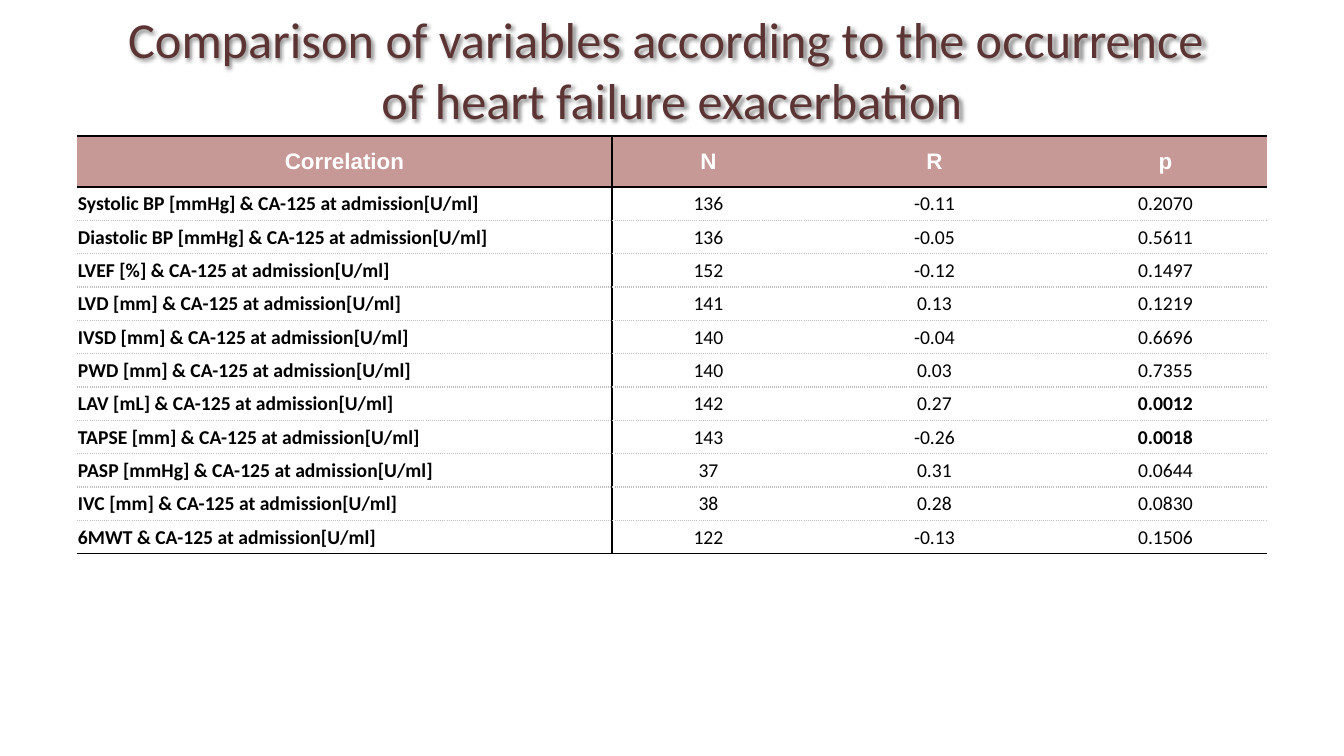
from lxml import etree
from pptx import Presentation
from pptx import util as u
from pptx.dml.color import RGBColor
from pptx.enum import text
from pptx.oxml import parse_xml
from pptx.oxml.ns import nsdecls, qn

SCALE = 914400 / 100.8
BLACK = RGBColor(0x00, 0x00, 0x00)
WHITE = RGBColor(0xFF, 0xFF, 0xFF)
GREY = RGBColor(0xBF, 0xBF, 0xBF)
OUTLINE = RGBColor(0x40, 0x40, 0x40)
ROSE = RGBColor(0xC6, 0x98, 0x96)
MAROON = RGBColor(0x5B, 0x34, 0x33)
NO_STYLE = "{2D5ABB26-0587-4C30-8999-92F81FD0307C}"
SOLID = (BLACK, "solid")
DOTTED = (GREY, "sysDot")

TITLE = "Comparison of variables according to the occurrence \vof heart failure exacerbation"
HEADINGS = ("Correlation", "N", "R", "p")
MARKER = "CA-125 at admission[U/ml]"
RESULTS = (
    ("Systolic BP [mmHg]", "136", "-0.11", "0.2070"),
    ("Diastolic BP [mmHg]", "136", "-0.05", "0.5611"),
    ("LVEF [%]", "152", "-0.12", "0.1497"),
    ("LVD [mm]", "141", "0.13", "0.1219"),
    ("IVSD [mm]", "140", "-0.04", "0.6696"),
    ("PWD [mm]", "140", "0.03", "0.7355"),
    ("LAV [mL]", "142", "0.27", "0.0012"),
    ("TAPSE [mm]", "143", "-0.26", "0.0018"),
    ("PASP [mmHg]", "37", "0.31", "0.0644"),
    ("IVC [mm]", "38", "0.28", "0.0830"),
    ("6MWT", "122", "-0.13", "0.1506"),
)
COLUMN_WIDTHS = (535, 193, 259, 203)
TABLE_HEIGHT = 418
HEADER_HEIGHT = 51


def px(length):
    return u.Emu(round(length * SCALE))


def format_para(para, font, size, color, bold=False, align=text.PP_ALIGN.CENTER):
    para.alignment = align
    for span in para.runs:
        span.font.name = font
        span.font.size = u.Pt(size)
        span.font.color.rgb = color
        span.font.bold = bold


def add_outline(span):
    span.font._element.insert(0, parse_xml(
        f'<a:ln {nsdecls("a")} w="9525"><a:solidFill><a:srgbClr val="{OUTLINE}">'
        '<a:alpha val="10000"/></a:srgbClr></a:solidFill></a:ln>'))


def add_shadow(box):
    box._element.spPr.append(parse_xml(
        f'<a:effectLst {nsdecls("a")}><a:outerShdw blurRad="38100" dist="25400" '
        f'dir="2700000" algn="tl"><a:srgbClr val="{BLACK}"><a:alpha val="45000"/>'
        '</a:srgbClr></a:outerShdw></a:effectLst>'))


def add_title(page):
    box = page.shapes.add_textbox(px(0), px(20), px(1344), px(98))
    frame = box.text_frame
    frame.word_wrap = True
    frame.vertical_anchor = text.MSO_ANCHOR.MIDDLE
    para = frame.paragraphs[0]
    para.text = TITLE
    format_para(para, "Calibri", 36, MAROON)
    for span in para.runs:
        add_outline(span)
    add_shadow(box)


def set_borders(cell, **borders):
    properties = cell._tc.get_or_add_tcPr()
    for side in "LRTB":
        line = etree.SubElement(properties, qn(f"a:ln{side}"), w="12700")
        if side not in borders:
            etree.SubElement(line, qn("a:noFill"))
            continue
        color, dash = borders[side]
        fill = etree.SubElement(line, qn("a:solidFill"))
        etree.SubElement(fill, qn("a:srgbClr"), val=str(color))
        etree.SubElement(line, qn("a:prstDash"), val=dash)


def style_header(cell):
    cell.fill.solid()
    cell.fill.fore_color.rgb = ROSE
    format_para(cell.text_frame.paragraphs[0], "Arial", 16, WHITE, bold=True)


def style_body(cell, column):
    cell.fill.background()
    cell.margin_left = cell.margin_right = cell.margin_top = px(1)
    cell.margin_bottom = px(0)
    significant = column == 3 and float(cell.text) < 0.05
    align = text.PP_ALIGN.CENTER if column else text.PP_ALIGN.LEFT
    format_para(cell.text_frame.paragraphs[0], "Calibri", 14, BLACK,
                bold=column == 0 or significant, align=align)


def add_results(page):
    rows = [HEADINGS] + [(f"{name} & {MARKER}", *values) for name, *values in RESULTS]
    frame = page.shapes.add_table(len(rows), len(HEADINGS), px(77), px(136),
                                  px(sum(COLUMN_WIDTHS)), px(TABLE_HEIGHT))
    table = frame.table
    table.horz_banding = False
    table._tbl.tblPr.find(qn("a:tableStyleId")).text = NO_STYLE
    for column, width in enumerate(COLUMN_WIDTHS):
        table.columns[column].width = px(width)
    body_height = (TABLE_HEIGHT - HEADER_HEIGHT) / len(RESULTS)
    for row, values in enumerate(rows):
        table.rows[row].height = px(body_height if row else HEADER_HEIGHT)
        for column, value in enumerate(values):
            cell = table.cell(row, column)
            cell.text_frame.text = value
            cell.vertical_anchor = text.MSO_ANCHOR.MIDDLE
            borders = {"T": SOLID if row < 2 else DOTTED,
                       "B": SOLID if row in (0, len(RESULTS)) else DOTTED}
            if column < 2:
                borders["L" if column else "R"] = SOLID
            set_borders(cell, **borders)
            if row:
                style_body(cell, column)
            else:
                style_header(cell)


def main():
    deck = Presentation()
    deck.slide_width, deck.slide_height = px(1344), px(756)
    page = deck.slides.add_slide(deck.slide_layouts[6])
    add_title(page)
    add_results(page)
    deck.save("out.pptx")


if __name__ == "__main__":
    main()
